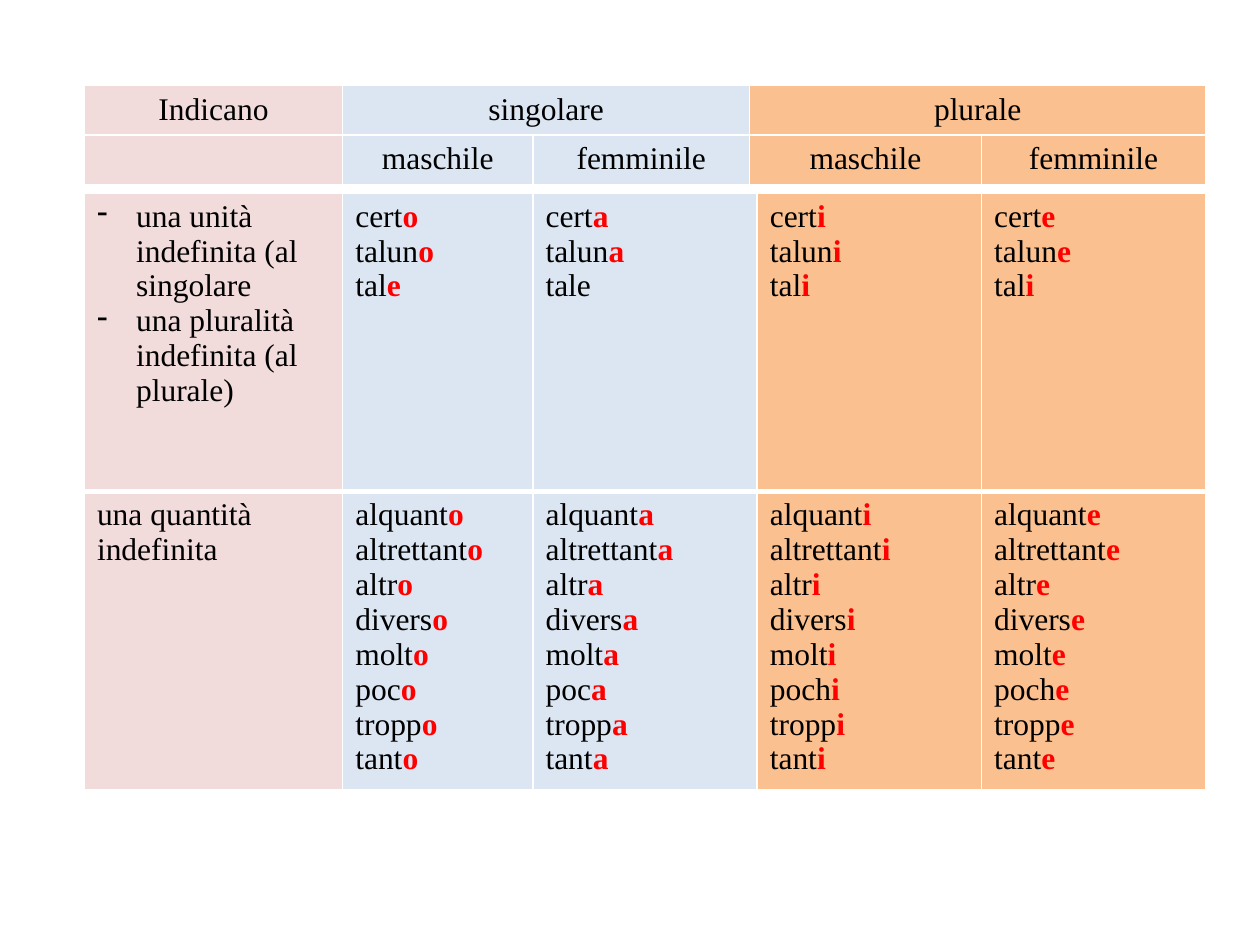
from lxml import etree
from pptx import Presentation
from pptx import util as u
from pptx.dml.color import RGBColor
from pptx.enum import text
from pptx.oxml import ns

THEME = {
    "font": "Times New Roman", "size": 18,
    "ink": "000000", "ending": "FF0000", "border": "FFFFFF",
    "label": "F2DCDB", "singular": "DCE6F2", "plural": "FAC090",
}

presentation = Presentation()
presentation.slide_width, presentation.slide_height = u.Inches(10), u.Inches(7.5)
column = presentation.slide_width / 100
row = presentation.slide_height / 100
slide = presentation.slides.add_slide(presentation.slide_layouts[6])


def write_text(frame, lines, align=None, bullet=None):
    for index, line in enumerate(lines):
        paragraph = frame.paragraphs[0] if index == 0 else frame.add_paragraph()
        paragraph.alignment = align
        stem, _, ending = line.partition("|")
        for part, color, bold in ((stem, "ink", False), (ending, "ending", True)):
            if part:
                run = paragraph.add_run()
                run.text = part
                run.font.name = THEME["font"]
                run.font.size = u.Pt(THEME["size"])
                run.font.bold = bold
                run.font.color.rgb = RGBColor.from_string(THEME[color])
        if bullet:
            properties = paragraph._p.get_or_add_pPr()
            indent = int(3.1 * column)
            properties.set("marL", str(indent))
            properties.set("indent", str(-indent))
            etree.SubElement(properties, ns.qn("a:buChar")).set("char", bullet)


def style_cell(cell, fill, bottom):
    cell.fill.solid()
    cell.fill.fore_color.rgb = RGBColor.from_string(THEME[fill])
    properties = cell._tc.get_or_add_tcPr()
    for index, (side, width) in enumerate((("L", 1), ("R", 1), ("T", 1), ("B", bottom))):
        line = etree.Element(ns.qn(f"a:ln{side}"), w=str(u.Pt(width)))
        solid = etree.SubElement(line, ns.qn("a:solidFill"))
        etree.SubElement(solid, ns.qn("a:srgbClr")).set("val", THEME["border"])
        properties.insert(index, line)


center = text.PP_ALIGN.CENTER
genders = [["maschile"], ["femminile"]]
five_fills = ["label", "singular", "singular", "plural", "plural"]
unit_words = [
    ["cert|o", "talun|o", "tal|e"], ["cert|a", "talun|a", "tale"],
    ["cert|i", "talun|i", "tal|i"], ["cert|e", "talun|e", "tal|i"],
]
stems = ["alquant", "altrettant", "altr", "divers", "molt", "poc", "tropp", "tant"]
quantity_words = [
    [f"{stem}{'h' if stem == 'poc' and ending in 'ie' else ''}|{ending}" for stem in stems]
    for ending in "oaie"
]
meanings = ["una unità indefinita (al singolare", "una pluralità indefinita (al plurale)"]

tables = [
    (9.07, 5.47, [20.5, 32.3, 36.2], ["label", "singular", "plural"], center,
     [[["Indicano"], ["singolare"], ["plurale"]]]),
    (14.27, 5.47, [20.5, 15.1, 17.2, 18.4, 17.8], five_fills, center,
     [[[], *genders, *genders]]),
    (20.4, 31.6, [20.5, 15.1, 17.8, 17.8, 17.8], five_fills, None,
     [[meanings, *unit_words], [["una quantità indefinita"], *quantity_words]]),
]

for top, height, widths, fills, align, content in tables:
    table = slide.shapes.add_table(
        len(content), len(widths), int(6.7 * column), int(top * row),
        int(sum(widths) * column), int(height * len(content) * row),
    ).table
    table.first_row = table.horz_banding = False
    for table_column, width in zip(table.columns, widths):
        table_column.width = int(width * column)
    for row_index, cells in enumerate(content):
        table.rows[row_index].height = int(height * row)
        for column_index, lines in enumerate(cells):
            cell = table.cell(row_index, column_index)
            style_cell(cell, fills[column_index], bottom=3 if row_index == 0 else 1)
            write_text(cell.text_frame, lines, align=align,
                       bullet="-" if lines is meanings else None)

presentation.save("out.pptx")
